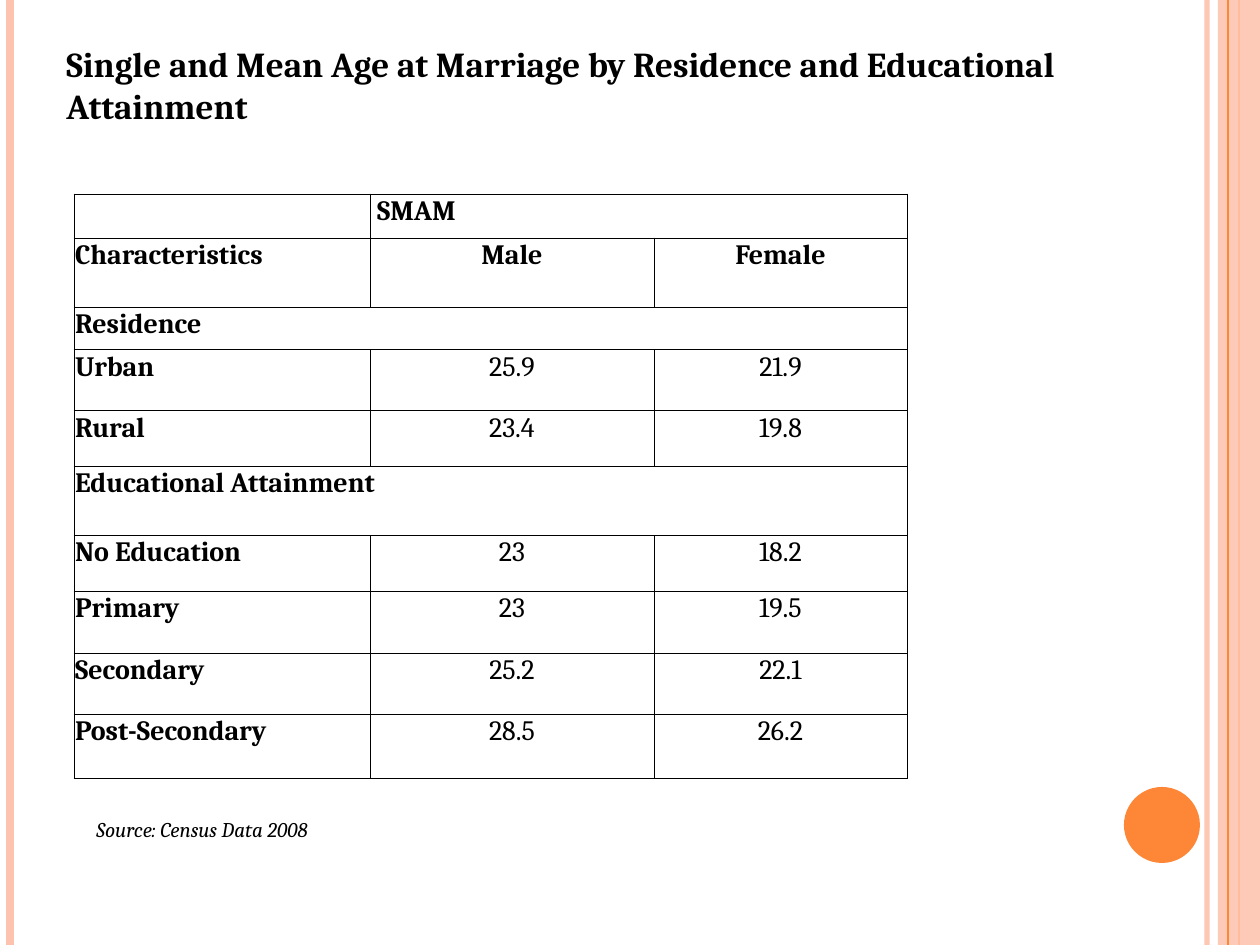
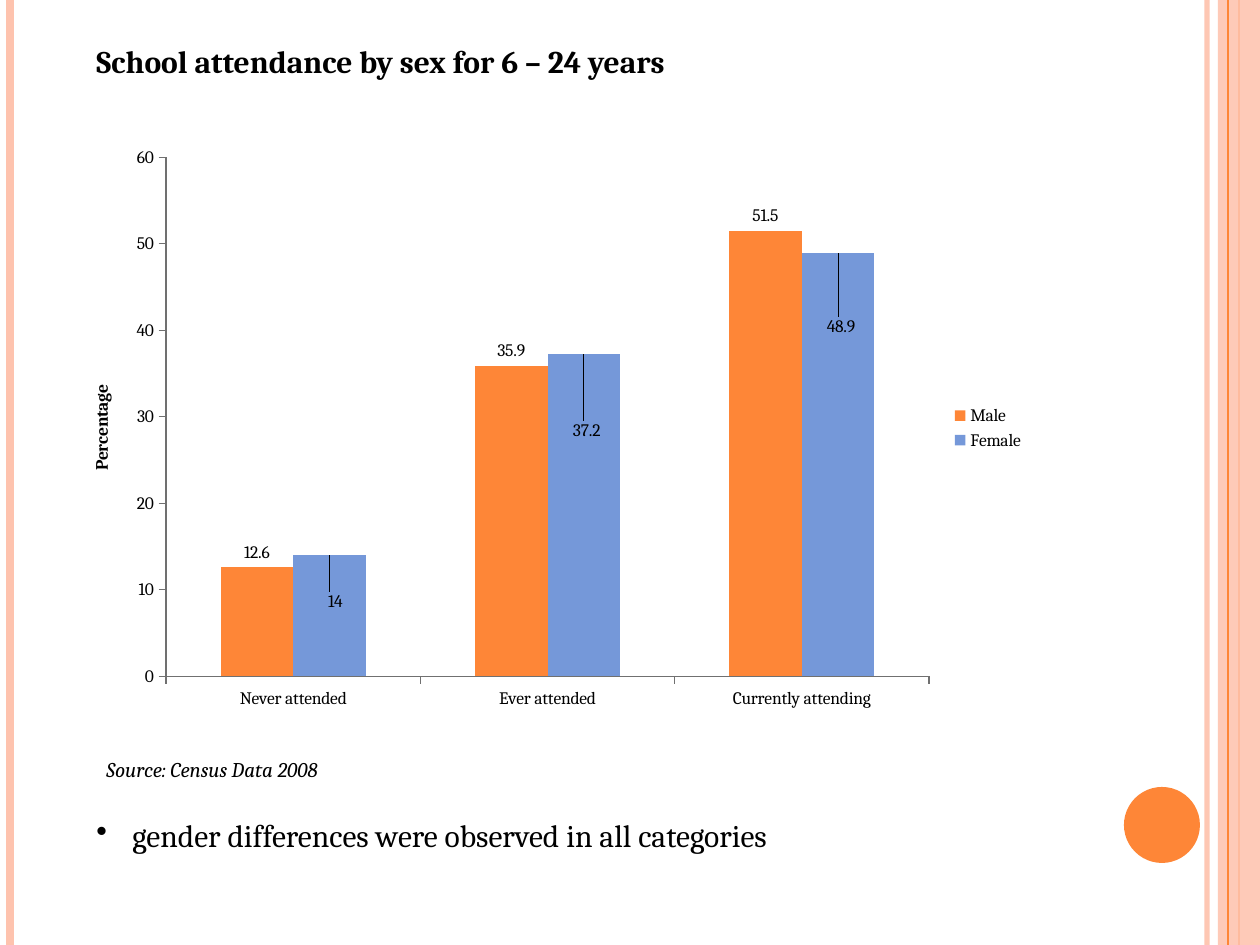
"""Build two census slides: age at marriage and school attendance."""
from lxml.etree import SubElement, fromstring
from pptx import Presentation
from pptx.chart.data import CategoryChartData
from pptx.dml.color import RGBColor
from pptx.enum.chart import XL_CHART_TYPE, XL_LABEL_POSITION, XL_LEGEND_POSITION, XL_TICK_MARK
from pptx.enum.shapes import MSO_CONNECTOR, MSO_SHAPE
from pptx.enum.text import PP_ALIGN
from pptx.oxml.ns import nsdecls, qn
from pptx.util import Emu, Pt

FONT = "Cambria"
BLACK, WHITE, PEACH, ORANGE, BLUE, GRAY = "000000", "FFFFFF", "FEC3AE", "FE8637", "7598D9", "707070"
SOURCE = "Source: Census Data 2008"
color = RGBColor.from_string


def px(length):
    """Turn px at 126 to the inch into EMU."""
    return Emu(round(length * 914400 / 126))


def add_text(slide, text, left, top, width, height, size, wrap=False, bold=False, italic=False):
    """Add a one-paragraph text box and return its paragraph."""
    box = slide.shapes.add_textbox(px(left), px(top), px(width), px(height))
    box.text_frame.word_wrap = wrap
    paragraph = box.text_frame.paragraphs[0]
    paragraph.text = text
    font = paragraph.font
    font.name, font.size, font.bold, font.italic = FONT, Pt(size), bold, italic
    font.color.rgb = color(BLACK)
    return paragraph


presentation = Presentation()
presentation.slide_width, presentation.slide_height = px(1260), px(945)
blank = presentation.slide_layouts[6]
marriage_slide = presentation.slides.add_slide(blank)
attendance_slide = presentation.slides.add_slide(blank)

decorations = [
    ("line", 1207, PEACH, 3, 93),
    ("line", 10, PEACH, 4.5, 100),
    ("line", 1239, ORANGE, 1.5, 100),
    (MSO_SHAPE.RECTANGLE, (1218, 0, 42, 945), PEACH, 0, 87),
    ("line", 1228, ORANGE, 0.75, 100),
    (MSO_SHAPE.OVAL, (1124, 787, 76, 76), ORANGE, 0, 100),
]
for slide in presentation.slides:
    slide.background.fill.solid()
    slide.background.fill.fore_color.rgb = color(WHITE)
    for kind, place, shade, weight, opacity in decorations:
        if kind == "line":
            shape = slide.shapes.add_connector(MSO_CONNECTOR.STRAIGHT, px(place), 0, px(place), px(945))
            shape.line.width = Pt(weight)
            shape.line.color.rgb = color(shade)
            SubElement(shape.element.spPr, qn("a:effectLst"))
        else:
            shape = slide.shapes.add_shape(kind, *map(px, place))
            shape.shadow.inherit = False
            shape.fill.solid()
            shape.fill.fore_color.rgb = color(shade)
            shape.line.fill.background()
        if opacity < 100:
            fill_color = shape.element.spPr.find(".//" + qn("a:srgbClr"))
            SubElement(fill_color, qn("a:alpha"), val=str(opacity * 1000))

add_text(marriage_slide, "Single and Mean Age at Marriage by Residence and Educational Attainment",
         54, 36, 1094, 97, 20, wrap=True, bold=True)
add_text(marriage_slide, SOURCE, 84, 810, 281, 38, 12, italic=True)

rows = [
    (44, ["", " SMAM"]),
    (69, ["Characteristics", "Male", "Female"]),
    (43, ["Residence"]),
    (61, ["Urban", "25.9", "21.9"]),
    (56, ["Rural", "23.4", "19.8"]),
    (69, ["Educational Attainment"]),
    (56, ["No Education", "23", "18.2"]),
    (62, ["Primary", "23", "19.5"]),
    (61, ["Secondary", "25.2", "22.1"]),
    (64, ["Post-Secondary", "28.5", "26.2"]),
]
column_widths = [296, 284, 253]
table_height = sum(height for height, texts in rows)
table = marriage_slide.shapes.add_table(
    len(rows), 3, px(74), px(194), px(sum(column_widths)), px(table_height)).table
table.first_row = table.horz_banding = False
for column, width in zip(table.columns, column_widths):
    column.width = px(width)
for row_index, (height, texts) in enumerate(rows):
    table.rows[row_index].height = px(height)
    if len(texts) < 3:
        table.cell(row_index, len(texts) - 1).merge(table.cell(row_index, 2))
    for column_index in range(3):
        cell = table.cell(row_index, column_index)
        cell.margin_left = cell.margin_right = cell.margin_top = px(1)
        cell.margin_bottom = 0
        cell.fill.background()
        for position, side in enumerate("LRTB"):
            border = fromstring(
                f'<a:ln{side} {nsdecls("a")} w="6350"><a:solidFill><a:srgbClr val="{BLACK}"/>'
                f'</a:solidFill></a:ln{side}>')
            cell._tc.get_or_add_tcPr().insert(position, border)
        paragraph = cell.text_frame.paragraphs[0]
        if column_index < len(texts):
            paragraph.text = texts[column_index]
        if column_index and len(texts) == 3:
            paragraph.alignment = PP_ALIGN.CENTER
        font = paragraph.font
        font.name, font.size = FONT, Pt(16)
        font.bold = column_index == 0 or row_index < 2
        font.color.rgb = color(BLACK)

add_text(attendance_slide, "School attendance by sex for 6 – 24 years", 84, 36, 697, 50, 18, bold=True)

chart_data = CategoryChartData()
chart_data.categories = ["Never attended", "Ever attended", "Currently attending"]
chart_data.add_series("Male", [12.6, 35.9, 51.5])
chart_data.add_series("Female", [14, 37.2, 48.9])
chart = attendance_slide.shapes.add_chart(
    XL_CHART_TYPE.COLUMN_CLUSTERED, px(64), px(135), px(973), px(586), chart_data).chart
chart.has_title = False
chart.font.name, chart.font.size = FONT, Pt(10)
chart.font.color.rgb = color(BLACK)
chart.has_legend = True
chart.legend.position = XL_LEGEND_POSITION.RIGHT
chart.legend.include_in_layout = False

value_axis = chart.value_axis
value_axis.minimum_scale, value_axis.maximum_scale, value_axis.major_unit = 0, 60, 10
value_axis.major_gridlines.format.line.color.rgb = color(WHITE)
value_axis.major_gridlines.format.line.width = Pt(0.75)
axis_title = value_axis.axis_title.text_frame
axis_title.text = "Percentage"
title_font = axis_title.paragraphs[0].font
title_font.name, title_font.size, title_font.bold = FONT, Pt(10), True
title_font.color.rgb = color(BLACK)
for axis in (value_axis, chart.category_axis):
    axis.major_tick_mark = XL_TICK_MARK.OUTSIDE
    axis.format.line.color.rgb = color(GRAY)
    axis.format.line.width = Pt(0.75)

plot = chart.plots[0]
plot.vary_by_categories = False
plot.gap_width, plot.overlap = 150, 0
for series, shade in zip(plot.series, (ORANGE, BLUE)):
    series.format.fill.solid()
    series.format.fill.fore_color.rgb = color(shade)
    series.invert_if_negative = False
    series.data_labels.show_value = True
    series.data_labels.position = XL_LABEL_POSITION.OUTSIDE_END
for point_index in range(3):
    plot.series[1].points[point_index].data_label.position = XL_LABEL_POSITION.OUTSIDE_END

plot_area = chart.element.find(".//" + qn("c:plotArea"))
for layout in plot_area.findall(qn("c:layout")):
    plot_area.remove(layout)
plot_layout = ('<c:layoutTarget val="inner"/><c:xMode val="edge"/><c:yMode val="edge"/>'
               '<c:x val="0.105"/><c:y val="0.038"/><c:w val="0.784"/><c:h val="0.886"/>')
layouts = [(plot_area, 0, plot_layout)]
label_offsets = [(0.006, 0.104), (0.003, 0.155), (0.003, 0.15)]
for label, (across, down) in zip(plot_area.iter(qn("c:dLbl")), label_offsets):
    layouts.append((label, 1, f'<c:x val="{across}"/><c:y val="{down}"/>'))
for parent, position, settings in layouts:
    parent.insert(position, fromstring(
        f'<c:layout {nsdecls("c")}><c:manualLayout>{settings}</c:manualLayout></c:layout>'))

add_text(attendance_slide, SOURCE, 94, 750, 281, 38, 12, italic=True)
finding = add_text(attendance_slide, "gender differences were observed in all categories", 84, 810, 772, 50, 18)
properties = finding._p.get_or_add_pPr()
properties.set("marL", str(px(36)))
properties.set("indent", str(-px(36)))
properties.insert(0, fromstring(f'<a:buChar {nsdecls("a")} char="•"/>'))

presentation.save("out.pptx")
